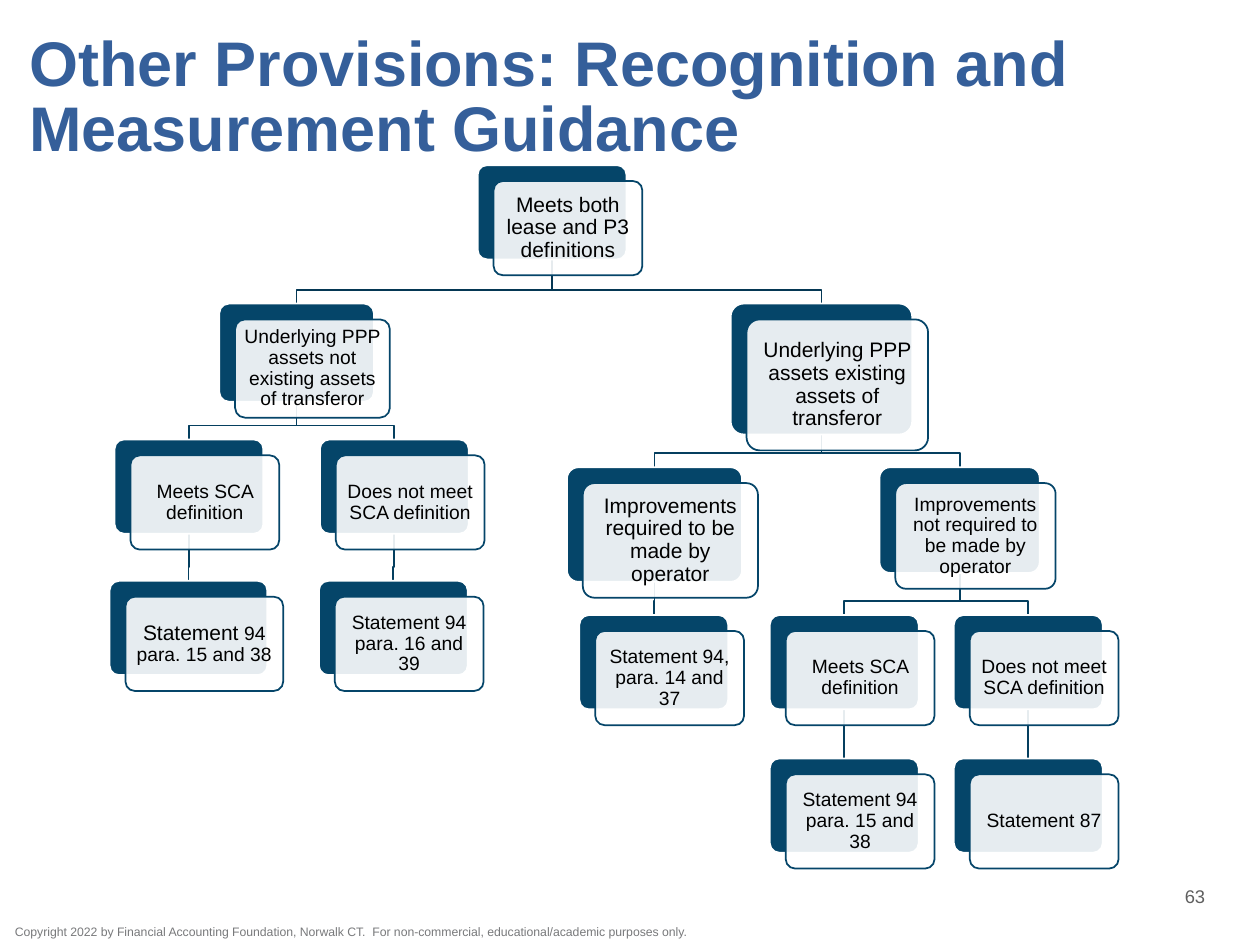
from dataclasses import dataclass, field

from lxml import etree
from pptx import Presentation
from pptx.dml.color import RGBColor
from pptx.enum import shapes as sh, text as tx
from pptx.oxml.ns import qn
from pptx.util import Cm, Pt

NAVY, TRUNK, BRANCH = "054569", "043754", "053F5F"
CARD_SHIFT = 0.32    # front card against back card, right and down
CARD_INSET = 0.12
ELBOW_RISE = 0.28    # height of the crossbar above a child
CARD_WIDTH, CARD_HEIGHT = 3.0, 1.9
ROWS_LEFT = (6.12, 8.86, 11.71)
ROWS_RIGHT = (6.12, 9.42, 12.4, 15.29)


@dataclass
class Node:
    """A card of the tree; each label run is a (wording, size) pair."""
    runs: list
    left: float
    top: float
    width: float = CARD_WIDTH
    height: float = CARD_HEIGHT
    children: list = field(default_factory=list)

    @property
    def middle(self):
        return self.left + self.width / 2


def color(value):
    return RGBColor.from_string(value)


def decision_tree():
    meets, fails = "Meets SCA definition", "Does not meet SCA definition"
    split, answer, source = ROWS_LEFT
    new_assets = Node(
        [("Underlying PPP assets not existing assets of transferor", 11)],
        4.42, split, 3.12, 1.98, [
            Node([(meets, 11)], 2.31, answer, children=[
                Node([("Statement", 12), (" 94 para. 15 and 38", 11)],
                     2.21, source, 3.18)]),
            Node([(fails, 11)], 6.45, answer, children=[
                Node([("Statement 94 para. 16 and 39", 11)], 6.43, source)]),
        ])
    split, improvement, answer, source = ROWS_RIGHT
    existing_assets = Node(
        [("Underlying PPP assets existing assets of transferor", 12)],
        14.73, split, 3.66, 2.64, [
            Node([("Improvements required to be made by operator", 12)],
                 11.43, improvement, 3.53, 2.31, [
                     Node([("Statement 94, para. 14 and 37", 11)],
                          11.68, answer)]),
            Node([("Improvements not required to be made by operator", 11)],
                 17.73, improvement, 3.23, 2.13, [
                     Node([(meets, 11)], 15.52, answer, children=[
                         Node([("Statement 94 para. 15 and 38", 11)],
                              15.52, source)]),
                     Node([(fails, 11)], 19.23, answer, children=[
                         Node([("Statement 87", 11)], 19.23, source)]),
                 ]),
        ])
    return Node([("Meets both lease and P3 definitions", 12)], 9.63, 3.33,
                children=[new_assets, existing_assets])


def add_label(slide, box, wording, size, ink, inset=0.0, bold=False):
    label = slide.shapes.add_textbox(*map(Cm, box))
    frame = label.text_frame
    frame.word_wrap = True
    frame.vertical_anchor = tx.MSO_ANCHOR.MIDDLE
    frame.margin_left = Cm(inset)
    frame.margin_right = frame.margin_top = frame.margin_bottom = 0
    paragraph = frame.paragraphs[0]
    paragraph.text = wording
    font = paragraph.font
    font.name, font.size, font.bold = "Arial", Pt(size), bold
    font.color.rgb = color(ink)
    return paragraph


def add_link(slide, parent, child, ink):
    start, end = parent.top + parent.height, child.top
    if parent.middle == child.middle:
        link = slide.shapes.add_connector(
            sh.MSO_CONNECTOR.STRAIGHT, Cm(parent.middle), Cm(start),
            Cm(child.middle), Cm(end))
        etree.SubElement(link._element.spPr, qn("a:effectLst"))
    else:
        crossbar = end - ELBOW_RISE
        outline = slide.shapes.build_freeform(Cm(parent.middle), Cm(start))
        outline.add_line_segments(
            [(Cm(x), Cm(y)) for x, y in ((parent.middle, crossbar),
                                         (child.middle, crossbar),
                                         (child.middle, end))], close=False)
        link = outline.convert_to_shape()
        link.fill.background()
        link.shadow.inherit = False
    link.line.color.rgb = color(ink)
    link.line.width = Pt(1)


def add_links(slide, node, ink):
    for child in node.children:
        add_links(slide, child, BRANCH)
        add_link(slide, node, child, ink)


def add_card(slide, box, fill, line):
    card = slide.shapes.add_shape(
        sh.MSO_SHAPE.ROUNDED_RECTANGLE, *map(Cm, box))
    card.adjustments[0] = 0.1
    card.shadow.inherit = False
    card.fill.solid()
    card.fill.fore_color.rgb = color(fill)
    card.line.color.rgb = color(line)
    card.line.width = Pt(1)
    return card


def add_node(slide, node):
    size = node.width, node.height
    add_card(slide, (node.left, node.top, *size), NAVY, "FFFFFF")
    front = add_card(
        slide, (node.left + CARD_SHIFT, node.top + CARD_SHIFT, *size),
        "FFFFFF", NAVY)
    fill = front._element.spPr.find(qn("a:solidFill"))
    etree.SubElement(fill[0], qn("a:alpha"), val="90000")

    frame = front.text_frame
    frame.word_wrap = True
    frame.vertical_anchor = tx.MSO_ANCHOR.MIDDLE
    frame.margin_left = frame.margin_right = Cm(CARD_INSET)
    frame.margin_top = frame.margin_bottom = Cm(CARD_INSET)
    paragraph = frame.paragraphs[0]
    paragraph.alignment = tx.PP_ALIGN.CENTER
    paragraph.line_spacing = 0.9
    paragraph.font.name = "Arial"
    paragraph.font.color.rgb = color("000000")
    for wording, points in node.runs:
        run = paragraph.add_run()
        run.text = wording
        run.font.size = Pt(points)
    for child in node.children:
        add_node(slide, child)


def main():
    deck = Presentation()
    deck.slide_width, deck.slide_height = Cm(25.4), Cm(19.05)
    slide = deck.slides.add_slide(deck.slide_layouts[6])

    add_label(slide, (0.3, 18.6, 13.8, 0.36),
              "Copyright 2022 by Financial Accounting Foundation, Norwalk CT.  "
              "For non-commercial, educational/academic purposes only.",
              7, "78797B")
    title = add_label(slide, (0.34, 0.75, 24.1, 2.49),
                      "Other Provisions: Recognition and Measurement Guidance",
                      36, "355F9A", inset=0.25, bold=True)
    title.line_spacing = Pt(37)
    number = add_label(slide, (22.78, 17.65, 2.62, 0.84), "63", 10.5, "5F5F5F")
    number.alignment = tx.PP_ALIGN.CENTER

    tree = decision_tree()
    add_links(slide, tree, TRUNK)
    add_node(slide, tree)
    deck.save("out.pptx")


if __name__ == "__main__":
    main()
